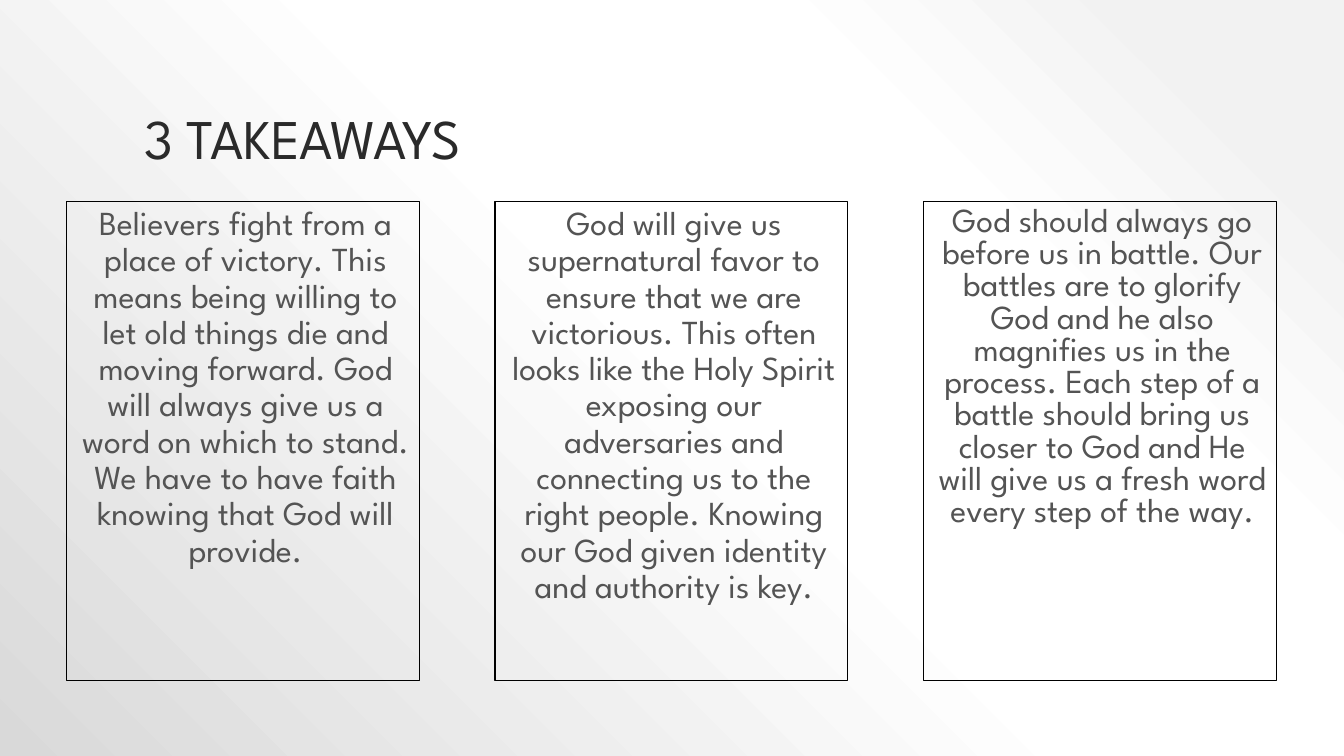
from dataclasses import dataclass

from lxml.etree import SubElement
from pptx import Presentation
from pptx.dml.color import RGBColor
from pptx.enum.shapes import MSO_SHAPE
from pptx.enum.text import MSO_ANCHOR, PP_ALIGN
from pptx.oxml.ns import qn
from pptx.slide import Slide
from pptx.util import Pt

FONT = "League Spartan"
CARD_LEFT, CARD_TOP, CARD_PITCH = 47.6, 144, 306
CARD_WIDTH, CARD_HEIGHT = 252, 342


@dataclass
class Takeaway:
    wording: str
    line_spacing: float = 0.9


TAKEAWAYS = [
    Takeaway(
        "Believers fight from a place of victory. This means being willing to "
        "let old things die and moving forward. God will always give us a word "
        "on which to stand. We have to have faith knowing that God will provide."
    ),
    Takeaway(
        "God will give us supernatural favor to ensure that we are victorious. "
        "This often looks like the Holy Spirit exposing our adversaries and "
        "connecting us to the right people. Knowing our God given identity and "
        "authority is key."
    ),
    Takeaway(
        "God should always go before us in battle. Our battles are to glorify "
        "God and he also magnifies us in the process. Each step of a battle "
        "should bring us closer to God and He will give us a fresh word every "
        "step of the way.",
        line_spacing=0.8,
    ),
]


def color(hex_value: str) -> RGBColor:
    return RGBColor.from_string(hex_value)


def paint_background(slide: Slide) -> None:
    """Radial gradient spreading from the top right corner."""
    slide.background.fill.gradient()
    gradient = slide.element.find(".//" + qn("a:gradFill"))
    for child in list(gradient):
        gradient.remove(child)
    stops = SubElement(gradient, qn("a:gsLst"))
    for percent, hex_value in [(10, "F2F2F2"), (28, "FFFFFF"), (48, "FFFFFF"), (100, "D9D9D9")]:
        stop = SubElement(stops, qn("a:gs"), pos=str(percent * 1000))
        SubElement(stop, qn("a:srgbClr"), val=hex_value)
    circle = SubElement(gradient, qn("a:path"), path="circle")
    SubElement(circle, qn("a:fillToRect"), l="100000", b="100000")


def write(frame, wording: str, size: float, hex_value: str, line_spacing: float):
    frame.word_wrap = True
    paragraph = frame.paragraphs[0]
    paragraph.text = wording
    paragraph.line_spacing = line_spacing
    paragraph.font.name = FONT
    paragraph.font.size = Pt(size)
    paragraph.font.color.rgb = color(hex_value)
    return paragraph


def draw_heading(slide: Slide) -> None:
    heading = slide.shapes.add_textbox(Pt(96), Pt(21.6), Pt(768), Pt(104.4))
    heading.text_frame.vertical_anchor = MSO_ANCHOR.BOTTOM
    write(heading.text_frame, "3 TAKEAWAYS", 40, "2A2A2A", 0.9)


def draw_takeaway(slide: Slide, column: int, takeaway: Takeaway) -> None:
    card = slide.shapes.add_shape(
        MSO_SHAPE.RECTANGLE,
        Pt(CARD_LEFT + column * CARD_PITCH), Pt(CARD_TOP), Pt(CARD_WIDTH), Pt(CARD_HEIGHT),
    )
    card.shadow.inherit = False
    card.fill.background()
    card.line.color.rgb = color("000000")
    card.line.width = Pt(0.75)
    card.text_frame.vertical_anchor = MSO_ANCHOR.TOP
    paragraph = write(card.text_frame, takeaway.wording, 24, "545454", takeaway.line_spacing)
    paragraph.alignment = PP_ALIGN.CENTER
    paragraph.space_before = Pt(18)
    # Left indent of the paragraph
    properties = paragraph._p.get_or_add_pPr()
    properties.set("marL", str(Pt(3.6)))
    properties.set("indent", "0")


def main() -> None:
    presentation = Presentation()
    presentation.slide_width, presentation.slide_height = Pt(960), Pt(540)
    slide = presentation.slides.add_slide(presentation.slide_layouts[6])
    paint_background(slide)
    draw_heading(slide)
    # Three equal columns
    for column, takeaway in enumerate(TAKEAWAYS):
        draw_takeaway(slide, column, takeaway)
    presentation.save("out.pptx")


if __name__ == "__main__":
    main()
